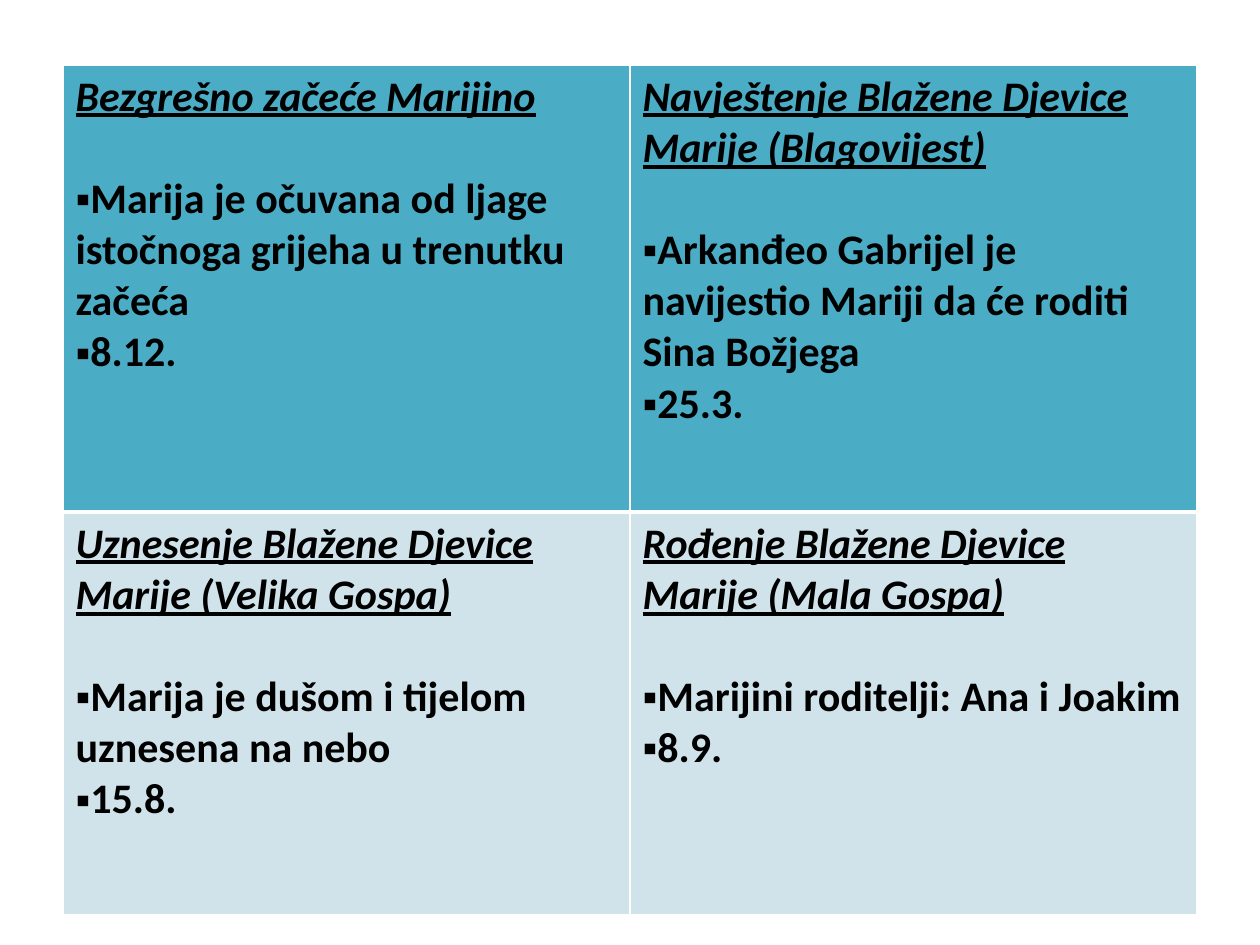
from dataclasses import dataclass

from lxml import etree
from pptx import Presentation, util as u
from pptx.dml.color import RGBColor
from pptx.oxml import ns

PX = 914400 / 126  # EMU in one px


@dataclass(frozen=True)
class Theme:
    face: str = "Calibri"
    mark: str = "Arial"  # face of the bullets
    size: int = 24
    gap: int = 29  # space under a heading, in points
    ink: str = "000000"
    rule: str = "FFFFFF"
    fills: tuple = ("4BACC6", "D0E3EA")
    thin: int = 1
    thick: int = 3


THEME = Theme()
COLS = (567, 567)
ROWS = (447, 403)

# Each feast: heading, then its points
FEASTS = (
    (
        ("Bezgrešno začeće Marijino",
         "Marija je očuvana od ljage istočnoga grijeha u trenutku začeća",
         "8.12."),
        ("Navještenje Blažene Djevice Marije (Blagovijest)",
         "Arkanđeo Gabrijel je navijestio Mariji da će roditi Sina Božjega",
         "25.3."),
    ),
    (
        ("Uznesenje Blažene Djevice Marije (Velika Gospa)",
         "Marija je dušom i tijelom uznesena na nebo",
         "15.8."),
        ("Rođenje Blažene Djevice Marije (Mala Gospa)",
         "Marijini roditelji: Ana i Joakim",
         "8.9."),
    ),
)


def px(n):
    return u.Emu(round(n * PX))


def add_node(parent, tag, **attrs):
    return etree.SubElement(parent, ns.qn(tag), **attrs)


def add_run(para, words, title):
    run = para.add_run()
    run.text = words
    style = dict(name=THEME.face, size=u.Pt(THEME.size), bold=True,
                 italic=title, underline=title)
    for key, value in style.items():
        setattr(run.font, key, value)
    run.font.color.rgb = RGBColor.from_string(THEME.ink)


def add_bullet(para):
    props = para._p.get_or_add_pPr()
    props.set("marL", "0")
    props.set("indent", "0")
    add_node(props, "a:buFont", typeface=THEME.mark)
    add_node(props, "a:buChar", char="▪")


def set_edges(cell, widths):
    props = cell._tc.get_or_add_tcPr()
    for side, width in widths.items():
        line = add_node(props, f"a:ln{side}", w=str(u.Pt(width)))
        fill = add_node(line, "a:solidFill")
        add_node(fill, "a:srgbClr", val=THEME.rule)


def fill_cell(cell, feast, row):
    # The heavy rule lies between the two rows
    widths = dict.fromkeys("LRTB", THEME.thin)
    widths["T" if row else "B"] = THEME.thick
    set_edges(cell, widths)
    cell.fill.solid()
    cell.fill.fore_color.rgb = RGBColor.from_string(THEME.fills[row])

    # Heading and bulleted points
    title, *points = feast
    frame = cell.text_frame
    head = frame.paragraphs[0]
    head.space_after = u.Pt(THEME.gap)
    add_run(head, title, True)
    for point in points:
        para = frame.add_paragraph()
        add_bullet(para)
        add_run(para, point, False)


def add_grid(slide):
    table = slide.shapes.add_table(
        len(ROWS), len(COLS), px(63), px(65), px(sum(COLS)), px(sum(ROWS))).table
    for col, width in zip(table.columns, COLS):
        col.width = px(width)
    for row, height in enumerate(ROWS):
        table.rows[row].height = px(height)
        for col, feast in enumerate(FEASTS[row]):
            fill_cell(table.cell(row, col), feast, row)


def main():
    deck = Presentation()
    deck.slide_width, deck.slide_height = px(1260), px(945)
    slide = deck.slides.add_slide(deck.slide_layouts[6])
    add_grid(slide)
    deck.save("out.pptx")


if __name__ == "__main__":
    main()
